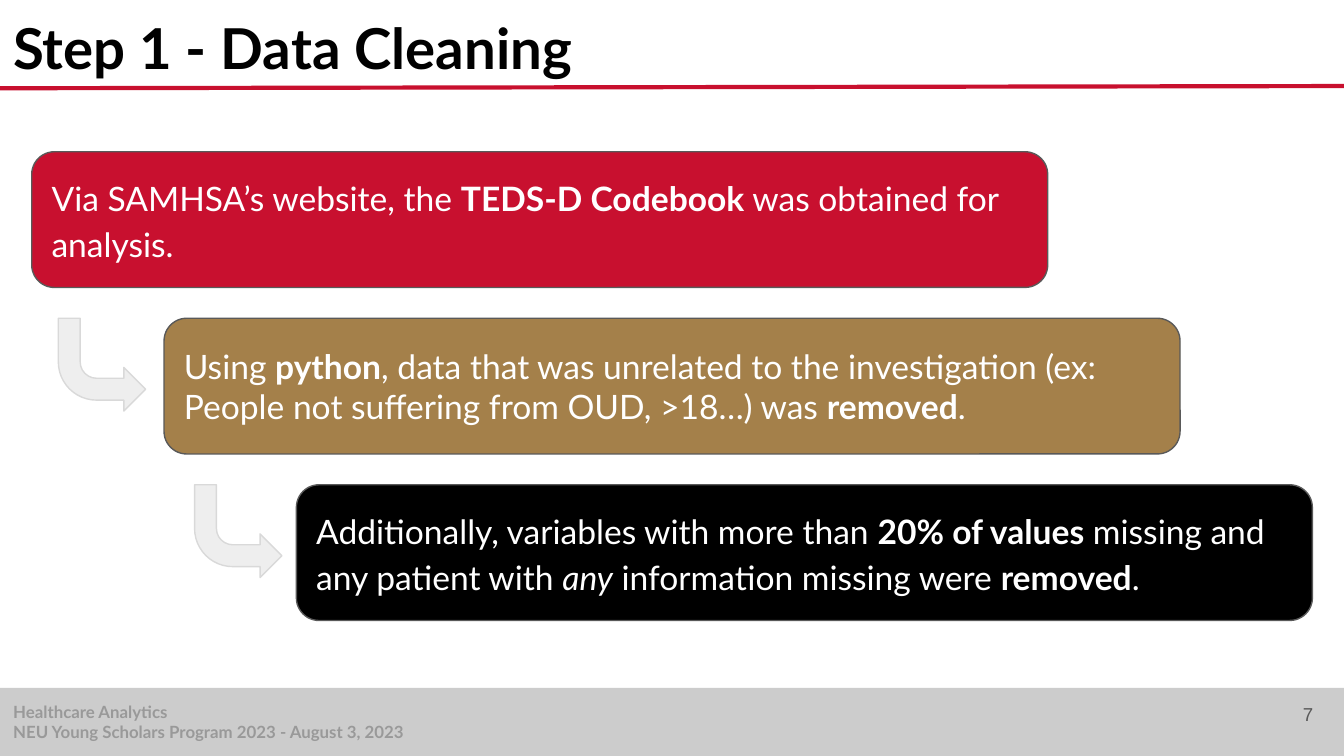
"""Build the data cleaning slide with its three cascading steps."""
from dataclasses import dataclass

from lxml import etree
from pptx import Presentation
from pptx import util as u
from pptx.dml.color import RGBColor
from pptx.enum import shapes, text
from pptx.oxml.ns import qn


@dataclass(frozen=True)
class Theme:
    font: str = "Lato"
    number_font: str = "Arial"
    ink: str = "000000"
    paper: str = "FFFFFF"
    rule: str = "C8102E"
    red: str = "C8102F"
    gold: str = "A4804A"
    outline: str = "595959"
    arrow: str = "EEEEEE"
    arrow_outline: str = "D9D9D9"
    band: str = "CCCCCC"
    footer: str = "999999"
    title_size: float = 30.2
    body_size: float = 18
    footer_size: float = 9
    number_size: float = 10
    inset: float = 7.2
    thin: float = 0.75
    thick: float = 2.25


class SlideBuilder:
    def __init__(self, slide, theme):
        self.slide = slide
        self.theme = theme

    def add_text(self, shape, paragraphs, size, color, font=None, bold=False,
                 anchor=text.MSO_ANCHOR.TOP, align=text.PP_ALIGN.LEFT, spacing=None, after=None):
        frame = shape.text_frame
        frame.word_wrap = True
        frame.vertical_anchor = anchor
        frame.margin_left = frame.margin_right = u.Pt(self.theme.inset)
        frame.margin_top = frame.margin_bottom = u.Pt(self.theme.inset)
        for index, runs in enumerate(paragraphs):
            paragraph = frame.add_paragraph() if index else frame.paragraphs[0]
            paragraph.alignment = align
            paragraph.line_spacing = spacing
            paragraph.space_after = None if after is None else u.Pt(after)
            for words, style in runs:
                run = paragraph.add_run()
                run.text = words
                run.font.name = font or self.theme.font
                run.font.size = u.Pt(size)
                run.font.bold = bold or style == "bold"
                run.font.italic = style == "italic"
                run.font.color.rgb = RGBColor.from_string(color)

    def textbox(self, box, paragraphs, size, color, **style):
        shape = self.slide.shapes.add_textbox(*map(u.Pt, box))
        self.add_text(shape, paragraphs, size, color, **style)

    def shape(self, kind, box, fill, outline=None, adjustments=()):
        shape = self.slide.shapes.add_shape(kind, *map(u.Pt, box))
        shape.shadow.inherit = False
        shape.fill.solid()
        shape.fill.fore_color.rgb = RGBColor.from_string(fill)
        if outline:
            shape.line.color.rgb = RGBColor.from_string(outline)
            shape.line.width = u.Pt(self.theme.thin)
        else:
            shape.line.fill.background()
        for index, value in enumerate(adjustments):
            shape.adjustments[index] = value
        return shape

    def rule(self, start, end):
        line = self.slide.shapes.add_connector(
            shapes.MSO_CONNECTOR.STRAIGHT, *map(u.Pt, start + end))
        line.line.color.rgb = RGBColor.from_string(self.theme.rule)
        line.line.width = u.Pt(self.theme.thick)
        etree.SubElement(line._element.spPr, qn("a:effectLst"))

    def step(self, box, fill, runs, **style):
        shape = self.shape(shapes.MSO_SHAPE.ROUNDED_RECTANGLE, box, fill,
                           self.theme.outline, [0.167])
        self.add_text(shape, [runs], self.theme.body_size, self.theme.paper, **style)

    def arrow(self, box):
        shape = self.shape(shapes.MSO_SHAPE.BENT_ARROW, box, self.theme.arrow,
                           self.theme.arrow_outline, [0.25, 0.25, 0.25, 0.438])
        shape.rotation = 180
        shape._element.spPr.find(qn("a:xfrm")).set("flipH", "1")


def main():
    theme = Theme()
    presentation = Presentation()
    presentation.slide_width, presentation.slide_height = u.Pt(720), u.Pt(405)
    slide = presentation.slides.add_slide(presentation.slide_layouts[6])
    builder = SlideBuilder(slide, theme)

    builder.textbox((0, 0, 671, 45.4), [[("Step 1 - Data Cleaning", "")]],
                    theme.title_size, theme.ink, bold=True)
    builder.rule((-0.7, 47.3), (720.7, 46.1))

    footer = builder.shape(shapes.MSO_SHAPE.RECTANGLE, (0, 368.6, 720, 36.4), theme.band)
    builder.add_text(footer, [[("Healthcare Analytics", "")],
                              [("NEU Young Scholars Program 2023 - August 3, 2023", "")]],
                     theme.footer_size, theme.footer, bold=True)

    loose = {"spacing": 1.15, "after": 12}
    steps = [
        (theme.red, loose, [
            ("Via SAMHSA’s website, the ", ""), ("TEDS-D Codebook", "bold"),
            (" was obtained for analysis.", "")]),
        (theme.gold, {"anchor": text.MSO_ANCHOR.MIDDLE}, [
            ("Using ", ""), ("python", "bold"),
            (", data that was unrelated to the investigation (ex: "
             "People not suffering from OUD, >18…) was ", ""),
            ("removed", "bold"), (".", "")]),
        (theme.ink, loose, [
            ("Additionally, variables with more than ", ""), ("20% of values", "bold"),
            (" missing and any patient with ", ""), ("any", "italic"),
            (" information missing were ", ""), ("removed", "bold"), (".", "")]),
    ]
    left, top, across, down = 17, 81.3, 70.9, 89.2
    for index, (fill, style, runs) in enumerate(steps):
        step_top = top + index * down
        builder.step((left + index * across, step_top, 544.3, 72.7), fill, runs, **style)
        if index:
            builder.arrow((31.2 + (index - 1) * 73, step_top, 46.8, 49.7))

    builder.textbox((667.4, 367.2, 43.2, 31), [[("7", "")]], theme.number_size, theme.outline,
                    font=theme.number_font, anchor=text.MSO_ANCHOR.MIDDLE,
                    align=text.PP_ALIGN.RIGHT)
    presentation.save("out.pptx")


if __name__ == "__main__":
    main()
